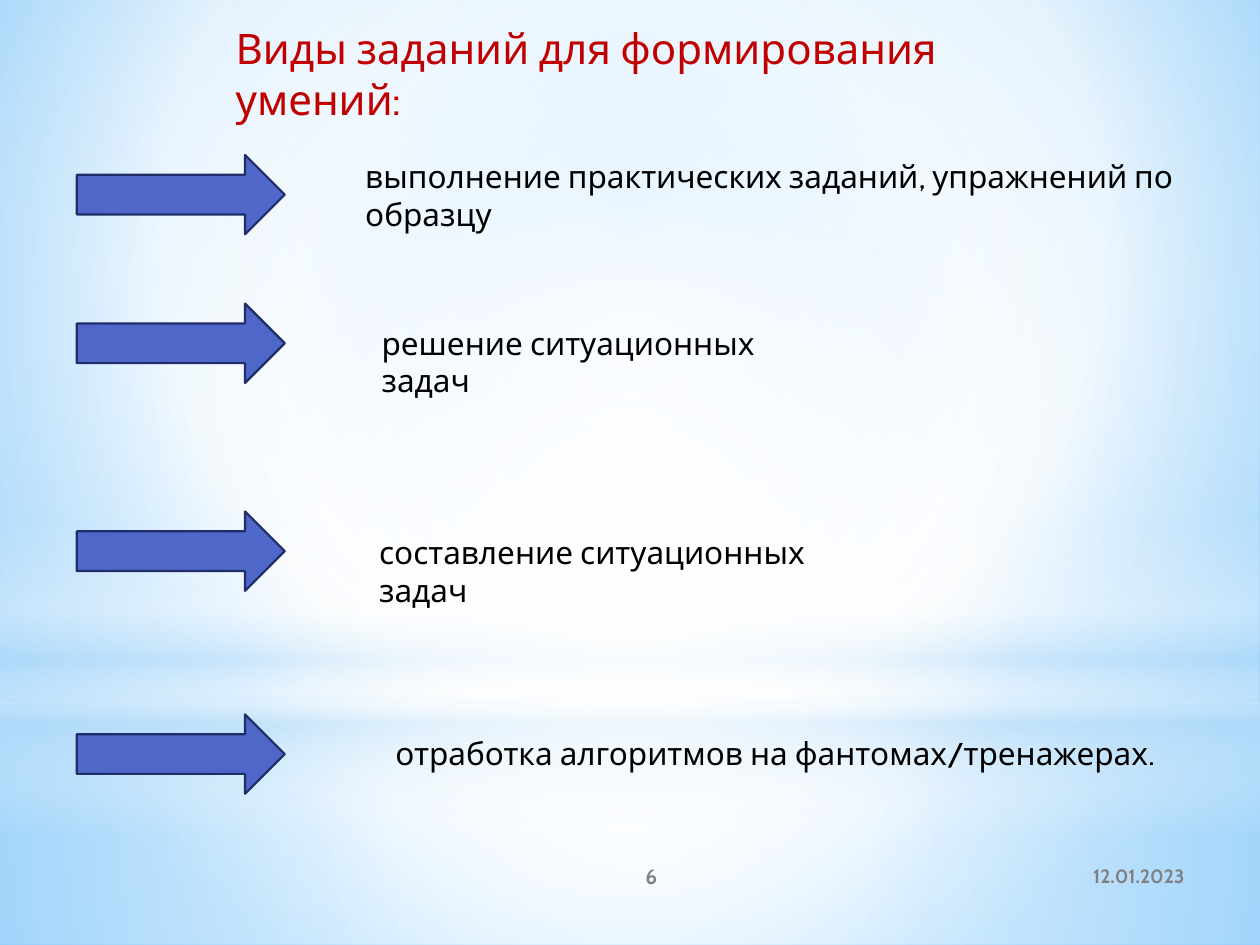
import pptx
import pptx.dml.color
import pptx.enum.shapes
import pptx.enum.text
import pptx.oxml
import pptx.oxml.ns
import pptx.util

Inches = pptx.util.Inches
SHAPE = pptx.enum.shapes.MSO_SHAPE
ALIGN = pptx.enum.text.PP_ALIGN
ANCHOR = pptx.enum.text.MSO_ANCHOR
AUTO_SIZE = pptx.enum.text.MSO_AUTO_SIZE
FONT = "Cabin"
WIDTH, HEIGHT = 10, 7.5
HORIZON = 5.58
CENTRE = (50, 50, 50, 50)

# Box (left, top, width, height), preset, stops (position, colour, opacity), focus
BACKDROP = [
    ((0, HORIZON, WIDTH, HEIGHT - HORIZON), SHAPE.RECTANGLE,
     [(0, "FFFFFF", 91), (37, "FFFFFF", 76), (100, "B4DCFA", 79)], CENTRE),
    ((0, 0, WIDTH, HORIZON), SHAPE.RECTANGLE,
     [(0, "FFFFFF", 89), (48, "FFFFFF", 62), (100, "B4DCFA", 79)], CENTRE),
    ((0, 4.12, WIDTH, 2.5), SHAPE.RECTANGLE,
     [(0, "FFFFFF", 0), (29, "FFFFFF", 30), (45, "B4DCFA", 40),
      (55, "FFFFFF", 26), (65, "B4DCFA", 60), (100, "FFFFFF", 0)], None),
    ((0, 1.75, WIDTH, HORIZON), SHAPE.OVAL,
     [(0, "FFFFFF", 100), (56, "FFFFFF", 0)], CENTRE),
]

# Arrow top, text, text box (left, top, width)
TASKS = [
    (1.23, "выполнение практических заданий, упражнений по образцу", (2.8, 1.2, 7.01)),
    (2.41, "решение ситуационных задач", (2.93, 2.52, 3.42)),
    (4.06, "составление ситуационных задач", (2.91, 4.18, 3.79)),
    (5.67, "отработка алгоритмов на фантомах/тренажерах.", (3.04, 5.78, 6.29)),
]


def rgb(value):
    return pptx.dml.color.RGBColor.from_string(value)


def set_gradient(fill, holder, stops, focus):
    """Fill holder with a circular gradient, or a vertical one if focus is None."""
    fill.solid()
    stop_xml = "".join(
        f'<a:gs pos="{pos * 1000}"><a:srgbClr val="{colour}">'
        f'<a:alpha val="{opacity * 1000}"/></a:srgbClr></a:gs>'
        for pos, colour, opacity in stops)
    if focus:
        sides = " ".join(f'{side}="{share * 1000}"' for side, share in zip("ltrb", focus))
        direction = f'<a:path path="circle"><a:fillToRect {sides}/></a:path>'
    else:
        direction = '<a:lin ang="5400000" scaled="0"/>'
    gradient = pptx.oxml.parse_xml(
        f'<a:gradFill {pptx.oxml.ns.nsdecls("a")} rotWithShape="1">'
        f'<a:gsLst>{stop_xml}</a:gsLst>{direction}</a:gradFill>')
    solid = holder.find(".//" + pptx.oxml.ns.qn("a:solidFill"))
    solid.getparent().replace(solid, gradient)


def add_shape(slide, preset, box):
    shape = slide.shapes.add_shape(preset, *map(Inches, box))
    shape.shadow.inherit = False
    return shape


def add_backdrop(slide):
    set_gradient(slide.background.fill, slide.background._cSld,
                 [(0, "9ED5FF", 100), (60, "FFFFFF", 100), (100, "5BB9FF", 100)],
                 (20, 10, 20, 60))
    for box, preset, stops, focus in BACKDROP:
        layer = add_shape(slide, preset, box)
        layer.line.fill.background()
        set_gradient(layer.fill, layer._element.spPr, stops, focus)


def add_arrow(slide, top):
    arrow = add_shape(slide, SHAPE.RIGHT_ARROW, (0.61, top, 1.65, 0.63))
    arrow.fill.solid()
    arrow.fill.fore_color.rgb = rgb("4E67C8")
    arrow.line.color.rgb = rgb("1F2E69")
    arrow.line.width = pptx.util.Pt(1.25)


def write(shape, text, size, colour, align=ALIGN.LEFT, anchor=ANCHOR.TOP,
          bold=False, auto_size=AUTO_SIZE.SHAPE_TO_FIT_TEXT):
    frame = shape.text_frame
    frame.text = text
    frame.word_wrap = True
    frame.auto_size = auto_size
    frame.vertical_anchor = anchor
    paragraph = frame.paragraphs[0]
    paragraph.alignment = align
    font = paragraph.runs[0].font
    font.name = FONT
    font.size = pptx.util.Pt(size)
    font.bold = bold
    font.color.rgb = rgb(colour)


def add_text(slide, box, text, size, colour, **style):
    write(slide.shapes.add_textbox(*map(Inches, box)), text, size, colour, **style)


def place_title(slide, text):
    """Set the title and bring it in front of the backdrop."""
    title = slide.shapes.title
    title.left, title.top, title.width, title.height = map(Inches, (1.77, 0.13, 6.35, 0.5))
    write(title, text, 24, "C00000")
    slide.shapes._spTree.append(title._element)


def add_footer(slide, left, width, text, size, align):
    add_text(slide, (left, 6.75, width, 0.4), text, size, "808080", align=align,
             anchor=ANCHOR.MIDDLE, bold=True, auto_size=AUTO_SIZE.NONE)


def main():
    deck = pptx.Presentation()
    deck.slide_width, deck.slide_height = Inches(WIDTH), Inches(HEIGHT)
    slide = deck.slides.add_slide(deck.slide_layouts.get_by_name("Title Only"))
    add_backdrop(slide)
    place_title(slide, "Виды заданий для формирования умений:")
    for arrow_top, task, box in TASKS:
        add_arrow(slide, arrow_top)
        add_text(slide, (*box, 0.4), task, 18, "000000")
    add_footer(slide, 6.75, 2.75, "12.01.2023", 11, ALIGN.RIGHT)
    add_footer(slide, 4.17, 2, "6", 12, ALIGN.CENTER)
    deck.save("out.pptx")


if __name__ == "__main__":
    main()
